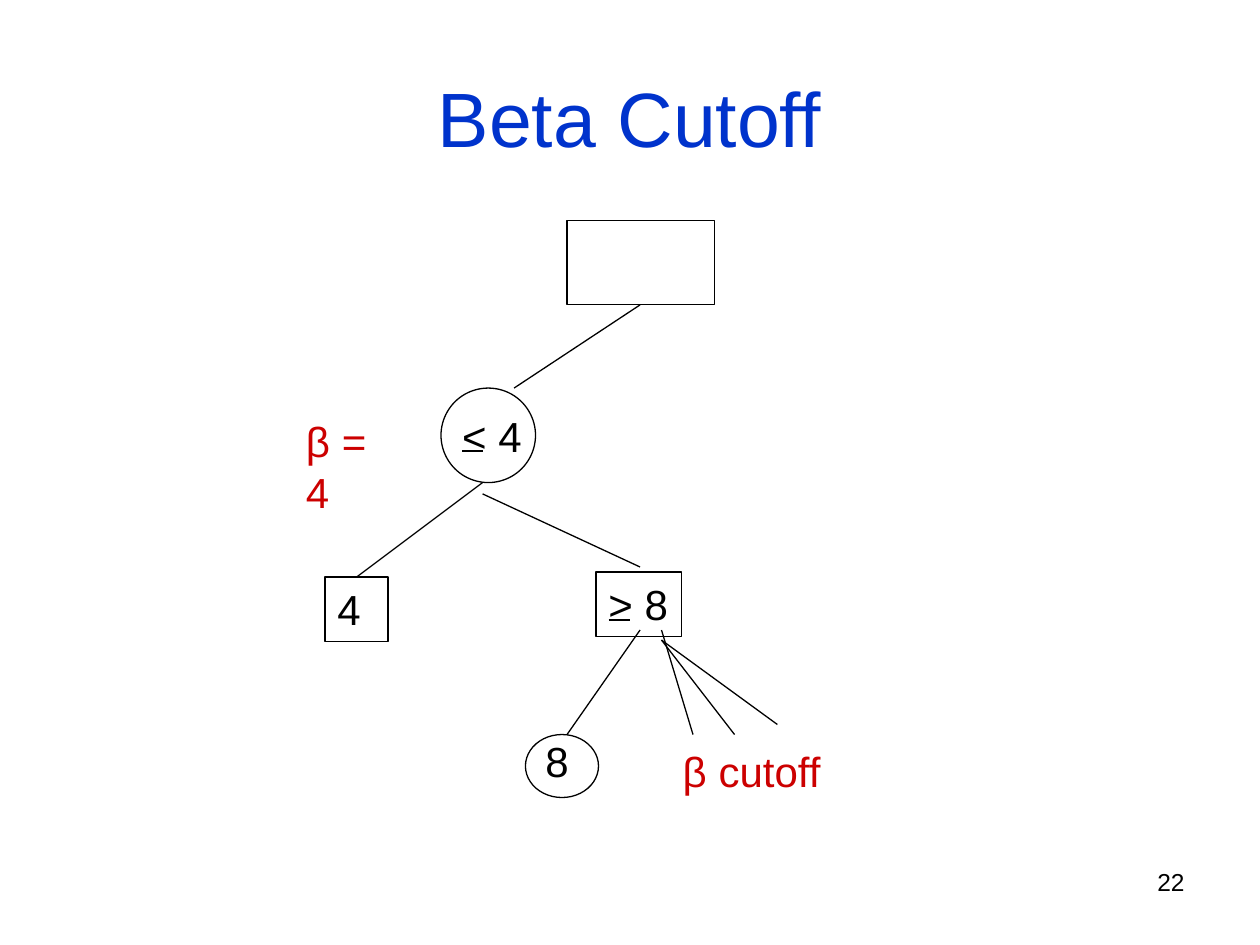
from dataclasses import dataclass

from lxml import etree
from pptx import Presentation
from pptx.dml.color import RGBColor
from pptx.enum import shapes, text
from pptx.oxml.ns import qn
from pptx.util import Inches, Pt


@dataclass(frozen=True)
class Theme:
    font: str = "Arial"
    title: RGBColor = RGBColor(0x00, 0x33, 0xCC)
    ink: RGBColor = RGBColor(0, 0, 0)
    accent: RGBColor = RGBColor(0xCC, 0, 0)
    title_pt: int = 44
    label_pt: int = 24
    number_pt: int = 14
    line_pt: float = 0.75


@dataclass(frozen=True)
class Box:
    left: float
    top: float
    width: float
    height: float

    def emu(self) -> list:
        return [Inches(v) for v in (self.left, self.top, self.width, self.height)]


@dataclass(frozen=True)
class Node:
    kind: shapes.MSO_SHAPE
    box: Box
    label: str = ""


@dataclass(frozen=True)
class Label:
    box: Box
    words: str
    color: RGBColor
    size: int
    wrap: bool = False
    align: text.PP_ALIGN = text.PP_ALIGN.LEFT


@dataclass(frozen=True)
class Edge:
    x1: float
    y1: float
    x2: float
    y2: float


T = Theme()
MAX, MIN = shapes.MSO_SHAPE.RECTANGLE, shapes.MSO_SHAPE.OVAL

NODES = [
    Node(MAX, Box(4.5, 1.75, 1.17, 0.67)),
    Node(MIN, Box(3.5, 3.08, 0.75, 0.75)),
    Node(MAX, Box(2.58, 4.58, 0.5, 0.51), "4"),
    Node(MAX, Box(4.73, 4.54, 0.68, 0.51), "> 8"),
    Node(MIN, Box(4.17, 5.83, 0.58, 0.5)),
]
LABELS = [
    Label(Box(3.57, 3.21, 0.67, 0.5), "< 4", T.ink, T.label_pt),
    Label(Box(4.23, 5.79, 0.39, 0.5), "8", T.ink, T.label_pt),
    Label(Box(2.33, 3.25, 0.95, 0.5), "β = 4", T.accent, T.label_pt, wrap=True),
    Label(Box(5.32, 5.87, 1.29, 0.5), "β cutoff", T.accent, T.label_pt, wrap=True),
    Label(Box(7.17, 6.83, 2.33, 0.52), "22", T.ink, T.number_pt, True, text.PP_ALIGN.RIGHT),
]
EDGES = [
    # Tree branches
    Edge(5.08, 2.42, 4.08, 3.08),
    Edge(3.83, 3.83, 2.83, 4.58),
    Edge(3.83, 3.92, 5.08, 4.5),
    Edge(5.08, 5, 4.5, 5.83),
    # Pruned branches
    Edge(5.25, 5, 5.5, 5.83),
    Edge(5.25, 5.08, 5.83, 5.83),
    Edge(5.25, 5.08, 6.17, 5.75),
    # Bars that turn < and > into "or equal"
    Edge(3.67, 3.58, 3.83, 3.58),
    Edge(4.83, 4.92, 5, 4.92),
]


def write(tf, words: str, size: int, color: RGBColor, align=text.PP_ALIGN.LEFT) -> None:
    p = tf.paragraphs[0]
    p.alignment = align
    r = p.add_run()
    r.text = words
    r.font.name, r.font.size = T.font, Pt(size)
    r.font.color.rgb = color


def add_node(s, node: Node) -> None:
    sp = s.shapes.add_shape(node.kind, *node.box.emu())
    sp.shadow.inherit = False
    sp.fill.background()
    sp.line.color.rgb, sp.line.width = T.ink, Pt(T.line_pt)
    if node.label:
        tf = sp.text_frame
        tf.word_wrap = False
        tf.vertical_anchor = text.MSO_ANCHOR.TOP
        write(tf, node.label, T.label_pt, T.ink)


def add_label(s, label: Label) -> None:
    tf = s.shapes.add_textbox(*label.box.emu()).text_frame
    tf.word_wrap = label.wrap
    write(tf, label.words, label.size, label.color, label.align)


def add_edge(s, e: Edge) -> None:
    ends = [Inches(v) for v in (e.x1, e.y1, e.x2, e.y2)]
    cx = s.shapes.add_connector(shapes.MSO_CONNECTOR.STRAIGHT, *ends)
    cx.line.color.rgb, cx.line.width = T.ink, Pt(T.line_pt)
    etree.SubElement(cx._element.spPr, qn("a:effectLst"))


def main() -> None:
    prs = Presentation()
    prs.slide_width, prs.slide_height = Inches(10), Inches(7.5)
    s = prs.slides.add_slide(prs.slide_layouts[5])

    # Title
    title = s.shapes.title
    title.left, title.top, title.width, title.height = Box(0.5, 0.3, 9, 1.25).emu()
    title.text_frame.vertical_anchor = text.MSO_ANCHOR.MIDDLE
    write(title.text_frame, "Beta Cutoff", T.title_pt, T.title, text.PP_ALIGN.CENTER)

    # Game tree
    for node in NODES:
        add_node(s, node)
    for label in LABELS:
        add_label(s, label)
    for edge in EDGES:
        add_edge(s, edge)

    prs.save("out.pptx")


if __name__ == "__main__":
    main()
